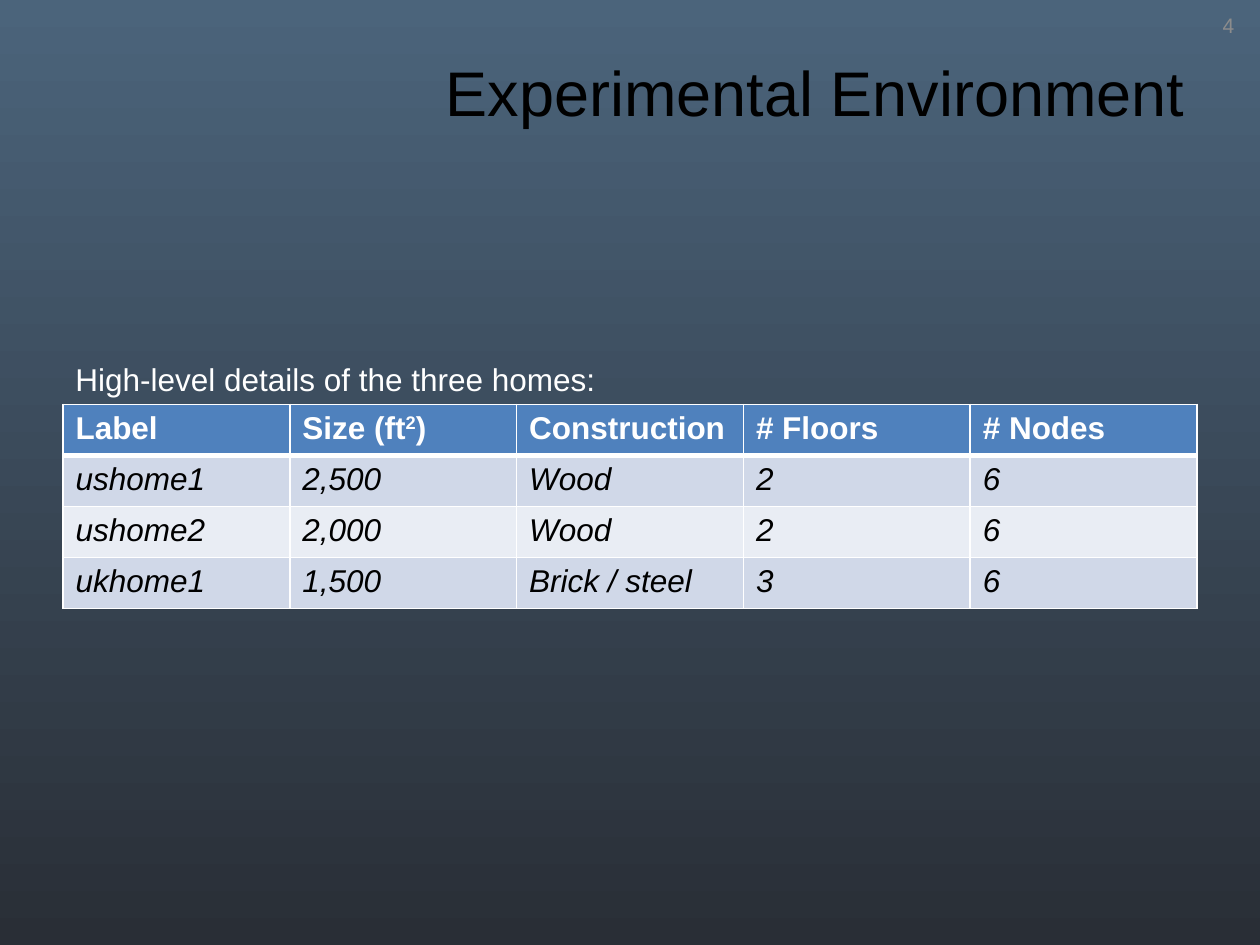
from lxml import etree
from pptx import Presentation
from pptx import util as u
from pptx.dml.color import RGBColor
from pptx.enum import text as t
from pptx.oxml import ns

WIDE, HIGH = u.Inches(10), u.Inches(7.5)
FONT = "Arial"
WHITE = RGBColor(255, 255, 255)
BLACK = RGBColor(0, 0, 0)
GRAY = RGBColor(0x8C, 0x8C, 0x8C)
BLUE = RGBColor(0x4F, 0x81, 0xBD)
BANDS = RGBColor(0xD0, 0xD8, 0xE8), RGBColor(0xE9, 0xED, 0xF4)
SKY = RGBColor(0x4B, 0x64, 0x7B), RGBColor(0x29, 0x2E, 0x36)

HOMES = [
    ["Label", ["Size (ft", "2", ")"], "Construction", "# Floors", "# Nodes"],
    ["ushome1", "2,500", "Wood", "2", "6"],
    ["ushome2", "2,000", "Wood", "2", "6"],
    ["ukhome1", "1,500", "Brick / steel", "3", "6"],
]


def write(frame, words, size=18, color=WHITE, bold=False, slant=False,
          align=t.PP_ALIGN.LEFT):
    para = frame.paragraphs[0]
    para.alignment = align
    runs = [words] if isinstance(words, str) else words
    for spot, word in enumerate(runs):
        run = para.add_run()
        run.text = word
        font = run.font
        font.name, font.size = FONT, u.Pt(size)
        font.bold, font.italic = bold, slant
        font.color.rgb = color
        if spot % 2:
            font._element.set("baseline", "30000")


def label(slide, box, words, anchor=t.MSO_ANCHOR.TOP, **style):
    frame = slide.shapes.add_textbox(*map(u.Inches, box)).text_frame
    frame.word_wrap = True
    frame.vertical_anchor = anchor
    write(frame, words, **style)


def edge(cell, side, width):
    props = cell._tc.get_or_add_tcPr()
    line = etree.SubElement(props, ns.qn("a:ln" + side), w=str(u.Pt(width)))
    fill = etree.SubElement(line, ns.qn("a:solidFill"))
    etree.SubElement(fill, ns.qn("a:srgbClr"), val=str(WHITE))


def grid(slide, box, rows):
    frame = slide.shapes.add_table(len(rows), len(rows[0]), *map(u.Inches, box))
    for row, words in enumerate(rows):
        head = row == 0
        for col, word in enumerate(words):
            cell = frame.table.cell(row, col)
            for side in "LRTB":
                thick = (side, row) in (("B", 0), ("T", 1))
                edge(cell, side, 3 if thick else 1)
            cell.fill.solid()
            cell.fill.fore_color.rgb = BLUE if head else BANDS[(row - 1) % 2]
            write(cell.text_frame, word, color=WHITE if head else BLACK,
                  bold=head, slant=not head)


def shade(slide):
    fill = slide.background.fill
    fill.gradient()
    fill.gradient_angle = 270
    for stop, color in zip(fill.gradient_stops, SKY):
        stop.color.rgb = color


def main():
    deck = Presentation()
    deck.slide_width, deck.slide_height = WIDE, HIGH
    slide = deck.slides.add_slide(deck.slide_layouts[6])
    shade(slide)
    label(slide, (2.28, 0.3, 7.22, 0.85), "Experimental Environment",
          anchor=t.MSO_ANCHOR.MIDDLE, size=36, color=BLACK,
          align=t.PP_ALIGN.RIGHT)
    grid(slide, (0.5, 3.21, 9, 1.62), HOMES)
    label(slide, (0.5, 2.81, 4.37, 0.4), "High-level details of the three homes:")
    label(slide, (9.5, 0, 0.5, 0.4), "4", anchor=t.MSO_ANCHOR.MIDDLE,
          size=12, color=GRAY, align=t.PP_ALIGN.CENTER)
    deck.save("out.pptx")


if __name__ == "__main__":
    main()
